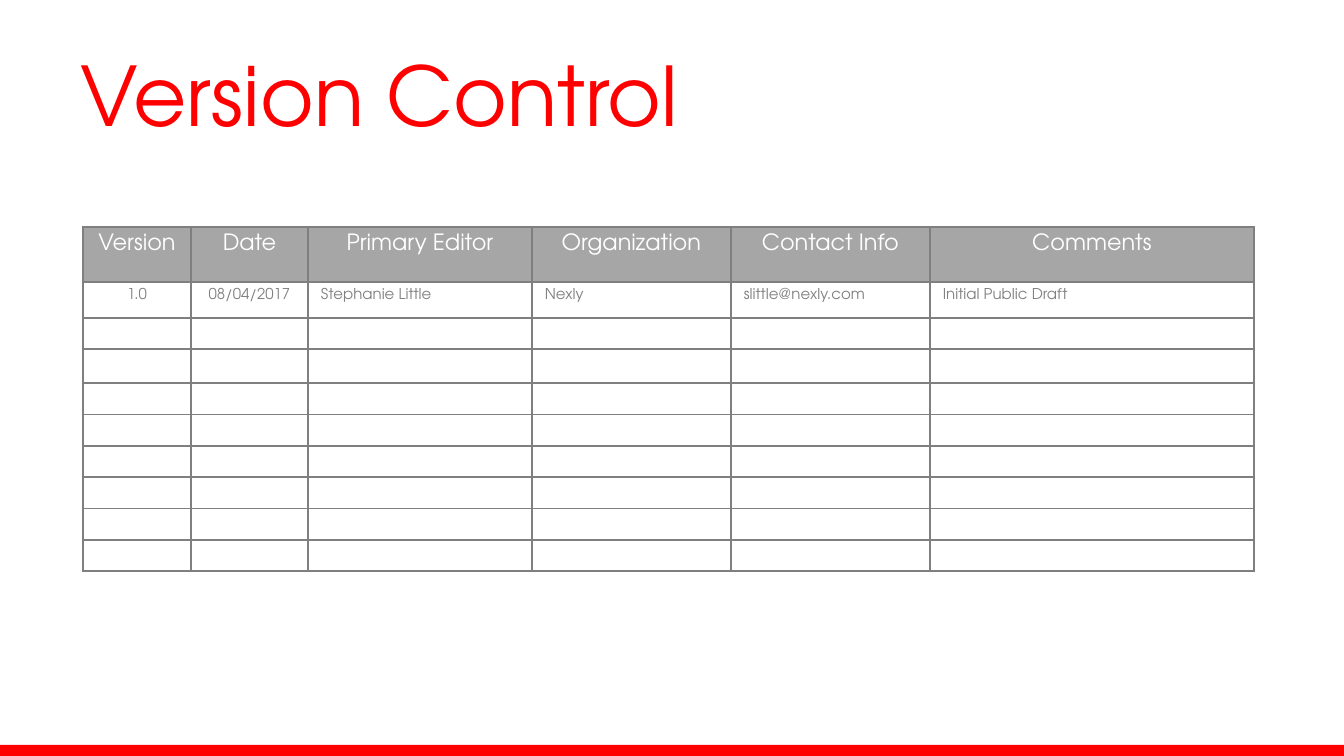
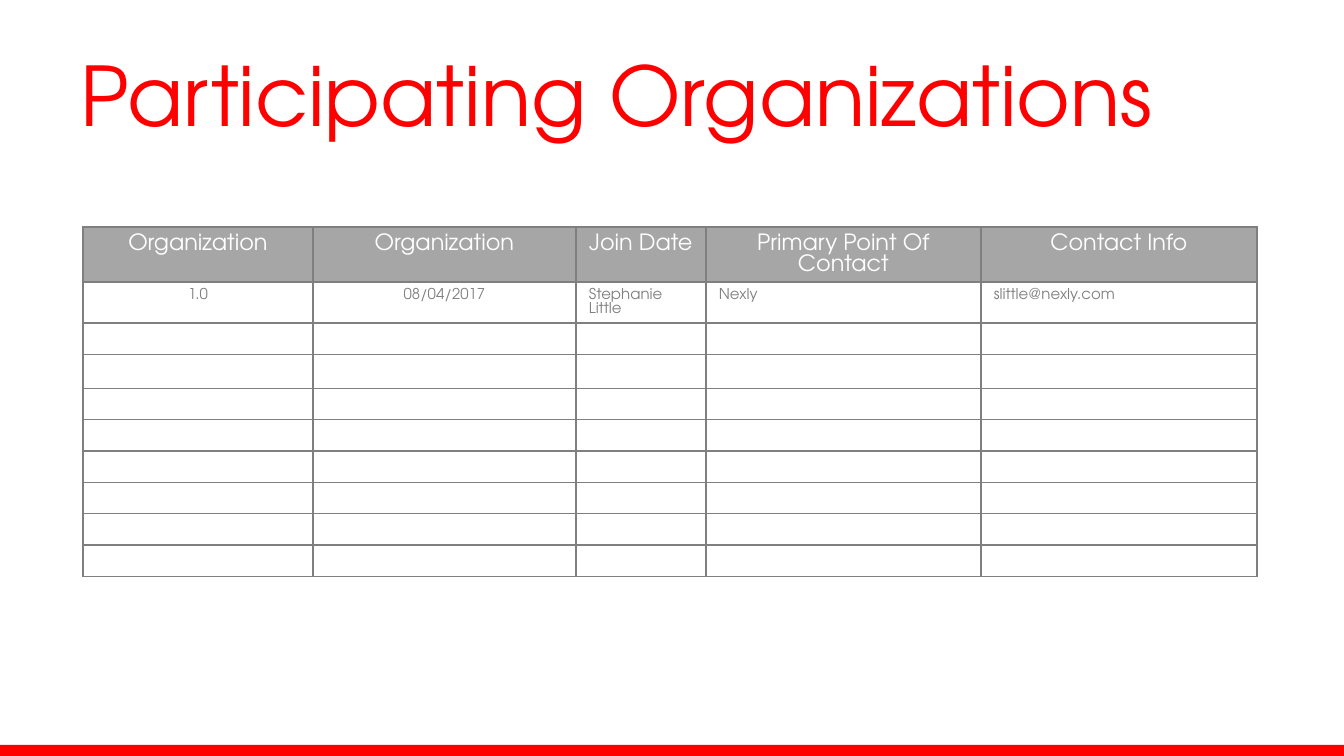
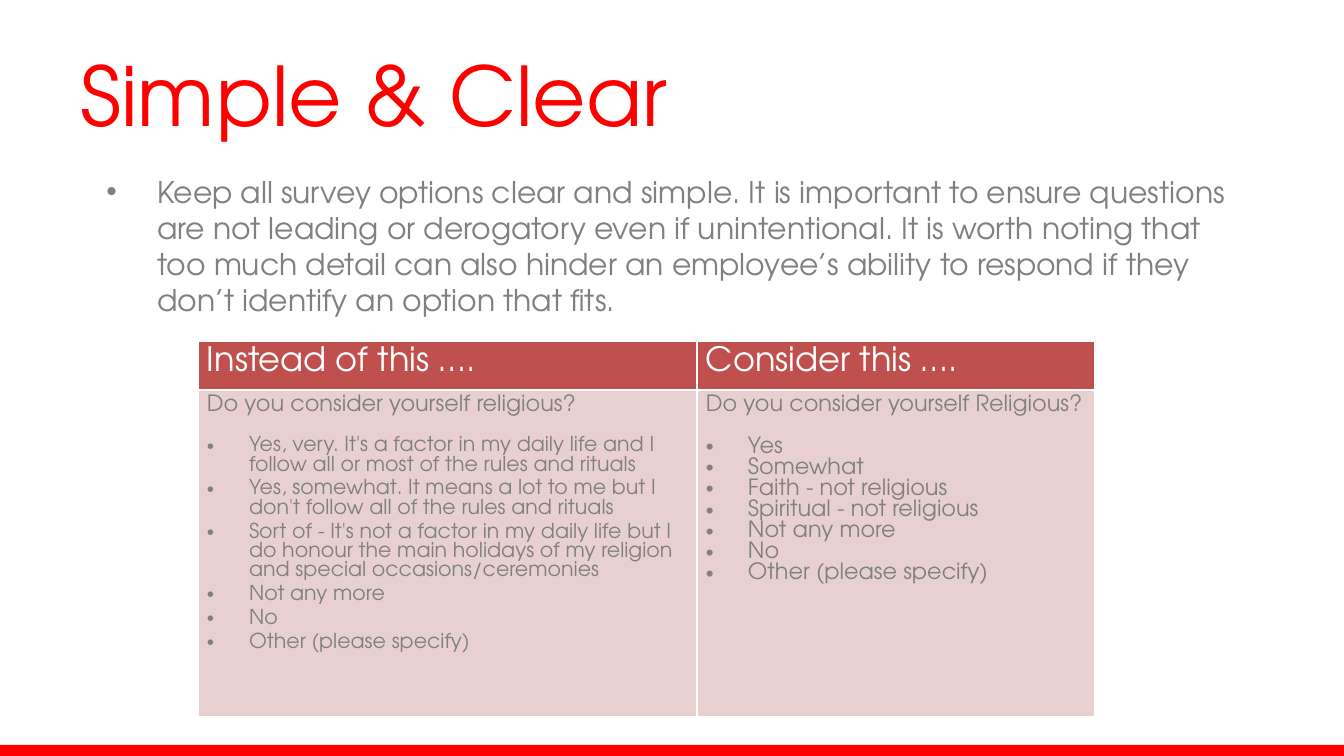
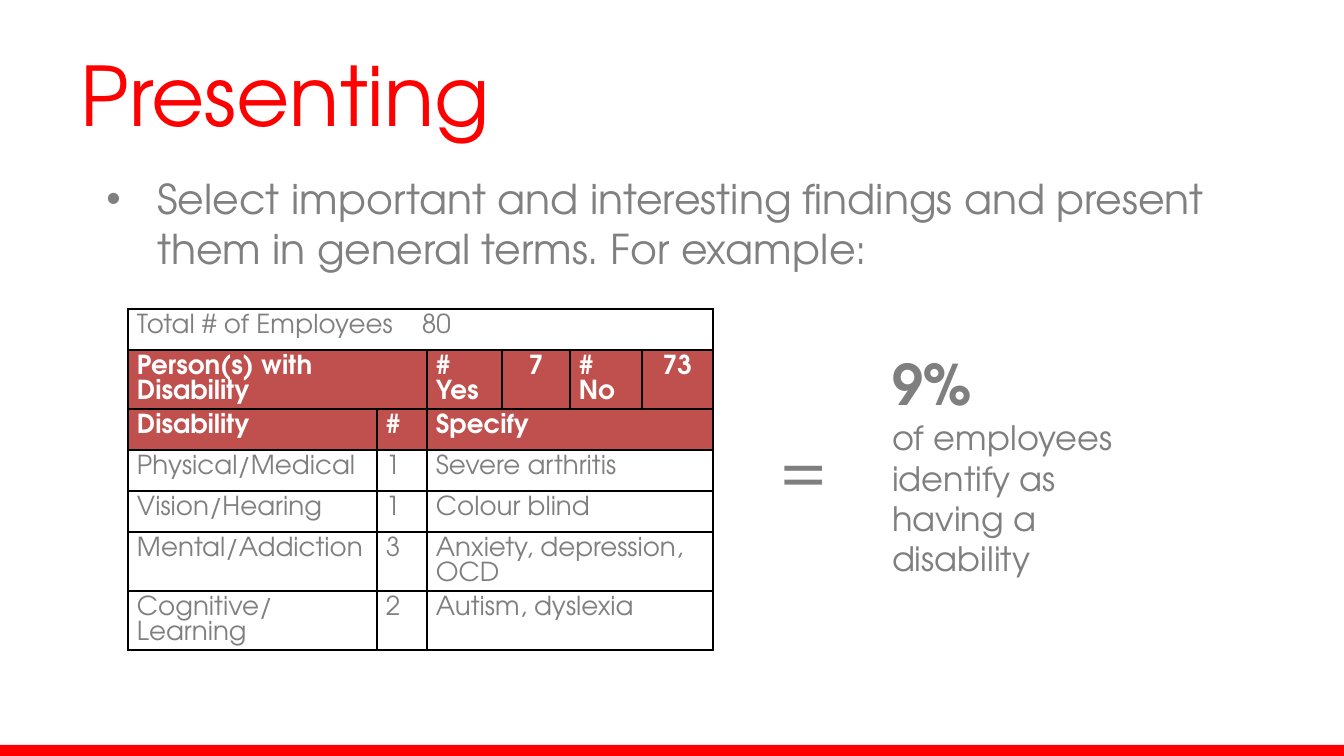
from lxml.etree import SubElement
from pptx import Presentation
from pptx.dml.color import RGBColor
from pptx.enum.shapes import MSO_SHAPE as Shape
from pptx.enum.text import MSO_ANCHOR as Anchor, MSO_AUTO_SIZE as AutoSize, PP_ALIGN as Align
from pptx.oxml import parse_xml
from pptx.oxml.ns import nsdecls, qn
from pptx.util import Emu, Pt

# Shared look
FONT = "TeX Gyre Adventor"
RED = RGBColor(0xFF, 0x00, 0x00)
BRICK = RGBColor(0xC0, 0x50, 0x4D)
BLUSH = RGBColor(0xE8, 0xD0, 0xD0)
WHITE = RGBColor(0xFF, 0xFF, 0xFF)
BLACK = RGBColor(0x00, 0x00, 0x00)
SILVER = RGBColor(0xA6, 0xA6, 0xA6)
GREY = RGBColor(0x80, 0x80, 0x80)
RULE_GREY = RGBColor(0x7F, 0x7F, 0x7F)

EMU_PER_PX = 914400 / 134.4
SLIDE_SIZE = (1344, 756)
BAND = (0, 745, 1344, 11)
TITLE_BOX = (67, 31, 1210, 126)
TABLE_LEADING = 0.94  # line height in tables, as a share of the text size

TITLE = dict(size=44, color=RED, align=Align.LEFT)
REGISTER_HEAD = dict(size=12, color=WHITE, align=Align.CENTER)
REGISTER_TEXT = dict(size=8, color=GREY)
REGISTER_CENTRED = dict(REGISTER_TEXT, align=Align.CENTER)
COMPARE_HEAD = dict(size=18, color=WHITE)
QUESTION = dict(size=12, color=GREY, after=11)
LONG_ANSWER = dict(size=11, color=GREY, bullet=42, after=2.4)
SHORT_ANSWER = dict(size=12, color=GREY, bullet=42)
COUNT_TEXT = dict(size=14, color=RULE_GREY)
COUNT_HEAD = dict(size=14, color=WHITE, bold=True)
COUNT_NUMBER = dict(COUNT_HEAD, align=Align.CENTER)

# Content: registers
LEFT_TOP = (83, 227)
EMPTY_ROWS = [31, 34, 31] + [28] * 5
REGISTERS = [
    dict(title="Version Control",
         columns=[108, 117, 224, 199, 199, 324], first_row=36,
         head=["Version", "Date", "Primary Editor", "Organization", "Contact Info", "Comments"],
         entry=["1.0", "08/04/2017", "Stephanie Little", "Nexly", "slittle@nexly.com",
                "Initial Public Draft"]),
    dict(title="Participating Organizations",
         columns=[230, 263, 130, 275, 276], first_row=41,
         head=["Organization", "Organization", "Join Date", "Primary Point Of Contact",
               "Contact Info"],
         entry=["1.0", "08/04/2017", "Stephanie Little", "Nexly", "slittle@nexly.com"]),
]

# Content: survey wording
CLEAR_ADVICE = (
    "Keep all survey options clear and simple. It is important to ensure questions are not "
    "leading or derogatory even if unintentional. It is worth noting that too much detail can "
    "also hinder an employee’s ability to respond if they don’t identify an option that fits.")
COMPARISON = [
    ("Instead of this ….", "Do you consider yourself religious?", LONG_ANSWER, [
        "Yes, very. It's a factor in my daily life and I follow all or most of the rules and rituals",
        "Yes, somewhat. It means a lot to me but I don't follow all of the rules and rituals",
        "Sort of - It's not a factor in my daily life but I do honour the main holidays of my "
        "religion and special occasions/ceremonies",
        "Not any more", "No", "Other (please specify)"]),
    ("Consider this ….", "Do you consider yourself Religious?", SHORT_ANSWER, [
        "Yes", "Somewhat", "Faith - not religious", "Spiritual - not religious",
        "Not any more", "No", "Other (please specify)"]),
]

# Content: findings
FINDINGS_ADVICE = ("Select important and interesting findings and present them in general terms. "
                   "For example:")
COUNT_COLUMNS = [249, 50, 75, 68, 72, 71]
COUNT_ROWS = [41, 58, 41, 41, 41, 59, 58]
DISABILITIES = [
    ("Physical/Medical", "1", "Severe arthritis"),
    ("Vision/Hearing", "1", "Colour blind"),
    ("Mental/Addiction", "3", "Anxiety, depression, OCD"),
    ("Cognitive/Learning", "2", "Autism, dyslexia"),
]


def px(length):
    return Emu(round(length * EMU_PER_PX))


def place(shape, area):
    for name, length in zip(("left", "top", "width", "height"), area):
        setattr(shape, name, px(length))


def set_margins(target, side, end):
    for name, length in dict(left=side, right=side, top=end, bottom=end).items():
        setattr(target, f"margin_{name}", px(length))


def format_para(para, size, color, bold=False, align=None, bullet=0, after=None,
                leading=None, tab=0):
    values = dict(alignment=align, line_spacing=leading and Pt(size * leading),
                  space_after=None if after is None else Pt(after))
    for name, value in values.items():
        if value is not None:
            setattr(para, name, value)
    properties = para._p.get_or_add_pPr()
    if bullet:
        properties.set("marL", str(px(bullet)))
        properties.set("indent", str(-px(bullet)))
        SubElement(properties, qn("a:buFont"), typeface="Arial")
        SubElement(properties, qn("a:buChar"), char="•")
    if tab:
        stops = SubElement(properties, qn("a:tabLst"))
        SubElement(stops, qn("a:tab"), pos=str(px(tab)), algn="l")
    for span in para.runs:
        for name, value in dict(name=FONT, size=Pt(size), bold=bold).items():
            setattr(span.font, name, value)
        span.font.color.rgb = color
    if not para.runs:
        SubElement(para._p, qn("a:endParaRPr"), sz=str(size * 100))


def write(frame, paras, **shared):
    """Fill a text frame from (text, format) pairs."""
    for index, (text, look) in enumerate(paras):
        para = frame.add_paragraph() if index else frame.paragraphs[0]
        if text:
            para.add_run().text = text
        format_para(para, **look, **shared)


def draw_borders(cell, color):
    properties = cell._tc.get_or_add_tcPr()
    for index, side in enumerate("LRTB"):
        properties.insert(index, parse_xml(
            f'<a:ln{side} {nsdecls("a")} w="12700"><a:solidFill>'
            f'<a:srgbClr val="{color}"/></a:solidFill></a:ln{side}>'))


def add_grid(page, corner, columns, rows, cells, border, margins):
    """Cells are rows of (paras, fill, columns spanned)."""
    area = (*corner, sum(columns), sum(rows))
    table = page.shapes.add_table(len(rows), len(columns), *map(px, area)).table
    table.first_row = table.horz_banding = False
    for column, width in zip(table.columns, columns):
        column.width = px(width)
    for row, height in zip(table.rows, rows):
        row.height = px(height)
    for row, entries in enumerate(cells):
        start = 0
        for paras, fill, spanned in entries:
            cell = table.cell(row, start)
            if spanned > 1:
                cell.merge(table.cell(row, start + spanned - 1))
            for column in range(start, start + spanned):
                part = table.cell(row, column)
                if fill is None:
                    part.fill.background()
                else:
                    part.fill.solid()
                    part.fill.fore_color.rgb = fill
                draw_borders(part, border)
            set_margins(cell, *margins)
            write(cell.text_frame, paras, leading=TABLE_LEADING)
            start += spanned


def add_page(deck, title, body=None, body_size=0, body_width=0):
    page = deck.slides.add_slide(deck.slide_layouts[1 if body else 5])
    place(page.shapes.title, TITLE_BOX)
    frame = page.shapes.title.text_frame
    frame.vertical_anchor = Anchor.MIDDLE
    frame.auto_size = AutoSize.NONE
    write(frame, [(title, TITLE)])
    if body:
        holder = page.placeholders[1]
        place(holder, (93, 167, body_width, 480))
        holder.text_frame.auto_size = AutoSize.NONE
        write(holder.text_frame, [(body, dict(size=body_size, color=GREY, bullet=51))])
    return page


def add_text(page, area, paras, margins, wrap=True):
    frame = page.shapes.add_textbox(*map(px, area)).text_frame
    frame.word_wrap = wrap
    set_margins(frame, *margins)
    write(frame, paras)


def add_master_band(deck, page):
    band = page.shapes.add_shape(Shape.RECTANGLE, *map(px, BAND))
    band.shadow.inherit = False
    band.fill.solid()
    band.fill.fore_color.rgb = RED
    band.line.fill.background()
    band.element.nvSpPr.cNvPr.set("id", "20")
    deck.slide_master.shapes.element.insert(2, band.element)


def add_register(deck, register):
    page = add_page(deck, register["title"])
    head = [([(text, REGISTER_HEAD)], SILVER, 1) for text in register["head"]]
    entry = [([(text, REGISTER_CENTRED if index < 2 else REGISTER_TEXT)], None, 1)
             for index, text in enumerate(register["entry"])]
    empty = [([("", REGISTER_TEXT)], None, 1)] * len(head)
    add_grid(page, LEFT_TOP, register["columns"], [55, register["first_row"]] + EMPTY_ROWS,
             [head, entry] + [empty] * len(EMPTY_ROWS), RULE_GREY, (13, 6.5))
    return page


def add_comparison(deck):
    page = add_page(deck, "Simple & Clear", CLEAR_ADVICE, 16, 1153)
    heads = [([(head, COMPARE_HEAD)], BRICK, 1) for head, *_ in COMPARISON]
    answers = [([(question, QUESTION)] + [(text, look) for text in options], BLUSH, 1)
               for _, question, look, options in COMPARISON]
    add_grid(page, (198, 341), [499, 398], [49, 327], [heads, answers], WHITE, (9, 5))


def add_findings(deck):
    page = add_page(deck, "Presenting", FINDINGS_ADVICE, 22, 1159)
    total = [([("Total # of Employees\t80", dict(COUNT_TEXT, tab=285))], None, 6)]
    split = [([("Person(s) with Disability", COUNT_HEAD)], BRICK, 2)]
    for label, number in (("# Yes", "7"), ("# No", "73")):
        split += [([(label, COUNT_HEAD)], BRICK, 1), ([(number, COUNT_NUMBER)], BRICK, 1)]
    spans = (1, 1, 4)
    head = [([(text, COUNT_HEAD)], BRICK, spanned)
            for text, spanned in zip(("Disability", "#", "Specify"), spans)]
    details = [[([(text, COUNT_TEXT)], None, spanned) for text, spanned in zip(record, spans)]
               for record in DISABILITIES]
    add_grid(page, (128, 309), COUNT_COLUMNS, COUNT_ROWS, [total, split, head] + details,
             BLACK, (9, 5))
    add_text(page, (883, 345, 281, 241), [
        ("9%", dict(size=30, color=RULE_GREY, bold=True)),
        ("of employees identify as having a disability", dict(size=18, color=RULE_GREY)),
    ], (9, 5))
    add_text(page, (767, 418, 69, 95), [("=", dict(size=36, color=RULE_GREY))], (13, 7), wrap=False)


def main():
    deck = Presentation()
    deck.slide_width, deck.slide_height = map(px, SLIDE_SIZE)
    pages = [add_register(deck, register) for register in REGISTERS]
    add_master_band(deck, pages[0])
    add_comparison(deck)
    add_findings(deck)
    deck.save("out.pptx")


if __name__ == "__main__":
    main()
